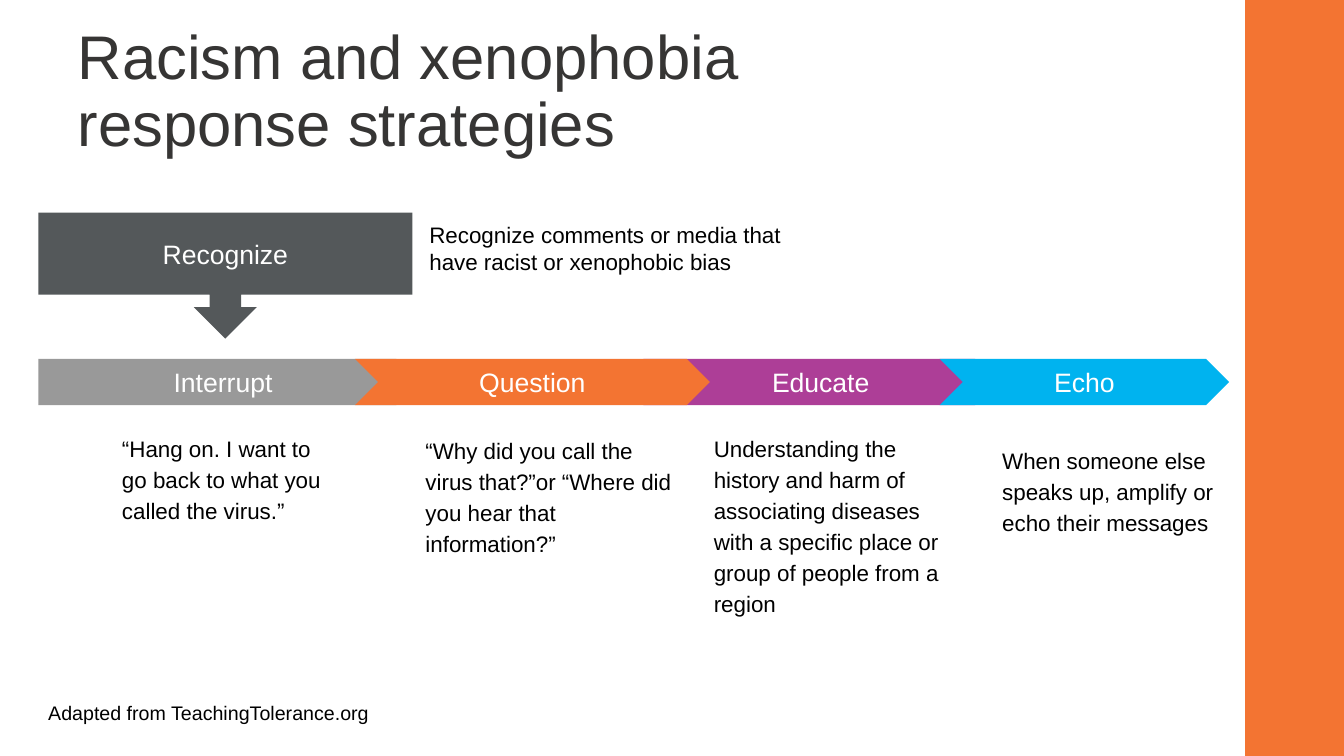
from pptx import Presentation
from pptx.dml.color import RGBColor as RGB
from pptx.enum.shapes import MSO_SHAPE as SHAPE
from pptx.enum.text import MSO_ANCHOR as ANCHOR, MSO_AUTO_SIZE as AUTO, PP_ALIGN as ALIGN
from pptx.util import Inches, Pt

WHITE = RGB(0xFF, 0xFF, 0xFF)
BLACK = RGB(0x00, 0x00, 0x00)
INK = RGB(0x36, 0x35, 0x34)
SLATE = RGB(0x54, 0x58, 0x5A)
GREY = RGB(0x99, 0x99, 0x99)
ORANGE = RGB(0xF3, 0x74, 0x32)
PURPLE = RGB(0xAD, 0x3E, 0x97)
BLUE = RGB(0x00, 0xB3, 0xEF)

LEFT = 0.38
STEP_TOP, STEP_HIGH = 3.56, 0.46

# Later steps overlap earlier ones: label, outline, colour, bar left and width, note box, note
STEPS = [
    ("Educate", SHAPE.CHEVRON, PURPLE, 6.38, 3.52, (6.95, 4.15, 2.7, 2.26),
     "Understanding the history and harm of associating diseases with a "
     "specific place or group of people from a region"),
    ("Interrupt", SHAPE.PENTAGON, GREY, LEFT, 3.78, (1.08, 4.15, 2.38, 1.78),
     "“Hang on. I want to go back to what you called the virus.”"),
    ("Echo", SHAPE.CHEVRON, BLUE, 9.32, 2.87, (9.81, 4.27, 2.38, 1.92),
     "When someone else speaks up, amplify or echo their messages"),
    ("Question", SHAPE.CHEVRON, ORANGE, 3.52, 3.52, (4.09, 4.17, 2.73, 1.78),
     "“Why did you call the virus that?”or “Where did you hear that information?”"),
]


def place(box):
    return [Inches(n) for n in box]


def write(shape, text, size, color, pad=0.1, anchor=ANCHOR.TOP, align=ALIGN.LEFT, space=1.0):
    frame = shape.text_frame
    frame.text = text
    form = {"word_wrap": True, "auto_size": AUTO.NONE, "vertical_anchor": anchor}
    for side in ("left", "top", "right", "bottom"):
        form["margin_" + side] = Inches(pad)
    for key, value in form.items():
        setattr(frame, key, value)
    para = frame.paragraphs[0]
    para.alignment, para.line_spacing = align, space
    for key, value in {"name": "Arial", "size": Pt(size)}.items():
        setattr(para.font, key, value)
    para.font.color.rgb = color


def draw(slide, kind, box, fill):
    shape = slide.shapes.add_shape(kind, *place(box))
    shape.shadow.inherit = False
    shape.fill.solid()
    shape.fill.fore_color.rgb = fill
    shape.line.fill.background()
    return shape


def label(shape, text, pad):
    write(shape, text, 19, WHITE, pad, ANCHOR.MIDDLE, ALIGN.CENTER)


def note(slide, box, text, size=16, **form):
    write(slide.shapes.add_textbox(*place(box)), text, size, BLACK, **form)


def head(slide, box):
    title = slide.shapes.title
    title.left, title.top, title.width, title.height = place(box)
    write(title, "Racism and xenophobia response strategies", 44, INK,
          anchor=ANCHOR.MIDDLE, space=0.9)
    frame = title.text_frame
    frame.margin_top = frame.margin_bottom = Inches(0.05)


def step(slide, name, kind, fill, left, width, box, text):
    """Draw one bar of the process with its note below."""
    bar = draw(slide, kind, (left, STEP_TOP, width, STEP_HIGH), fill)
    label(bar, name, 0.13)
    note(slide, box, text, pad=0.13, space=1.15)


def start(slide, left, top, width, height):
    """Draw the callout that leads into the steps, with its note at the right."""
    call = draw(slide, SHAPE.DOWN_ARROW_CALLOUT, (left, top, width, height), SLATE)
    for i, value in enumerate((0.25, 0.25, 0.25, 0.65)):
        call.adjustments[i] = value
    label(call, "Recognize", 0.1)
    note(slide, (left + width + 0.07, top - 0.02, 3.78, 0.92),
         "Recognize comments or media that have racist or xenophobic bias")


def main():
    deck = Presentation()
    deck.slide_width, deck.slide_height = Inches(13.33), Inches(7.5)
    slide = deck.slides.add_slide(deck.slide_layouts[5])
    draw(slide, SHAPE.RECTANGLE, (12.35, 0, 0.98, 7.5), ORANGE)
    head(slide, (0.67, 0.3, 9.44, 1.25))
    for item in STEPS:
        step(slide, *item)
    note(slide, (LEFT, 6.85, 4.87, 0.42), "Adapted from TeachingTolerance.org", 14)
    start(slide, LEFT, 2.11, 3.71, 1.25)
    deck.save("out.pptx")


if __name__ == "__main__":
    main()
